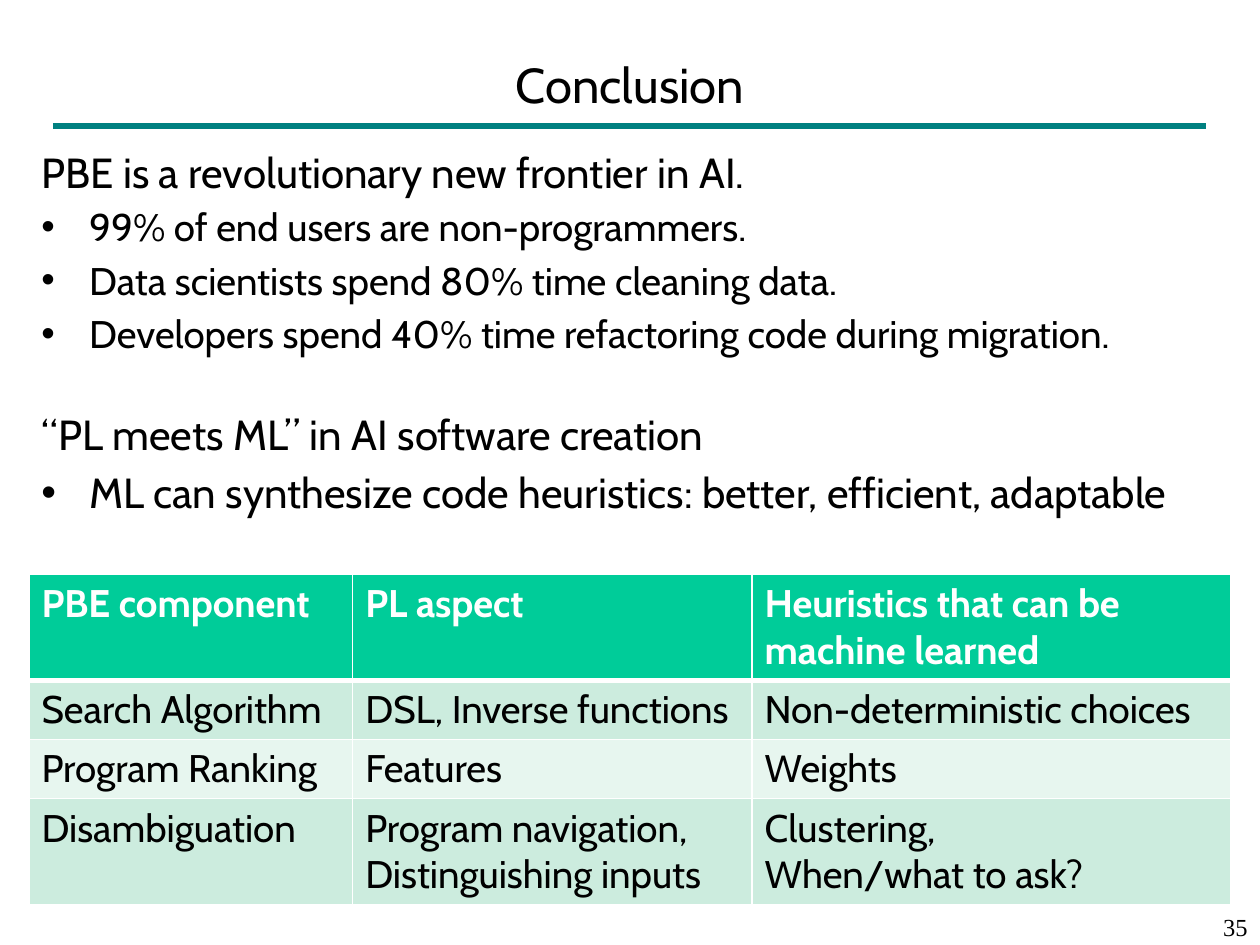
"""Build the conclusion slide: title, bullet points and a component table."""
from lxml import etree
from pptx import Presentation
from pptx.dml.color import RGBColor
from pptx.enum.shapes import MSO_CONNECTOR
from pptx.enum.text import MSO_ANCHOR, PP_ALIGN
from pptx.oxml.ns import qn
from pptx.util import Inches, Pt

STRAIGHT = MSO_CONNECTOR.STRAIGHT
LEFT, CENTER, RIGHT = PP_ALIGN.LEFT, PP_ALIGN.CENTER, PP_ALIGN.RIGHT
TOP, MIDDLE = MSO_ANCHOR.TOP, MSO_ANCHOR.MIDDLE

THEME = {
    "font": "Cabin", "number_font": "Times New Roman",
    "text": "000000", "light": "FFFFFF", "rule": "008080",
    "header": "00CC99", "bands": ("CCECDE", "E7F6EF"),
    "title": 28, "lead": 24, "point": 22, "number": 14,
    "rule_width": 4, "border": 1, "header_border": 3,
}

TITLE = "Conclusion"
NUMBER = "35"
BODY = [
    ("PBE is a revolutionary new frontier in AI.", "lead", False, 0),
    ("99% of end users are non-programmers.", "point", True, 4),
    ("Data scientists spend 80% time cleaning data.", "point", True, 4),
    ("Developers spend 40% time refactoring code during migration.", "point", True, 4),
    ("“PL meets ML” in AI software creation", "lead", False, 30),
    ("ML can synthesize code heuristics: better, efficient, adaptable", "lead", True, 4.5),
]
TABLE = [
    ("PBE component", "PL aspect", "Heuristics that can be machine learned"),
    ("Search Algorithm", "DSL, Inverse functions", "Non-deterministic choices"),
    ("Program Ranking", "Features", "Weights"),
    ("Disambiguation", "Program navigation, Distinguishing inputs",
     "Clustering,\nWhen/what to ask?"),
]
COLS = (2.57, 3.17, 3.8)
ROWS = (0.84, 0.47, 0.47, 0.84)
BOXES = {
    "title": (0.75, 0.33, 8.5, 0.67),
    "body": (0.23, 1.11, 9.55, 3.74),
    "number": (7.94, 7.19, 2.06, 0.31),
    "table": (0.23, 4.56, sum(COLS), sum(ROWS)),
}
RULE = (0.42, 1, 9.57, 1)
INDENT = 0.38


def rgb(name):
    return RGBColor.from_string(THEME.get(name, name))


def add_run(p, text, size, color="text", **extra):
    r = p.add_run()
    r.text = text
    fmt = {"name": THEME["font"], "size": Pt(THEME[size]), "bold": False, **extra}
    for key, value in fmt.items():
        setattr(r.font, key, value)
    r.font.color.rgb = rgb(color)


def add_box(slide, box, anchor=TOP):
    tf = slide.shapes.add_textbox(*map(Inches, BOXES[box])).text_frame
    tf.word_wrap = True
    tf.vertical_anchor = anchor
    return tf


def add_label(slide, box, text, align, anchor=TOP, **extra):
    p = add_box(slide, box, anchor).paragraphs[0]
    p.alignment = align
    add_run(p, text, box, **extra)


def add_bullet(p):
    pPr = p._p.get_or_add_pPr()
    pPr.set("marL", str(Inches(INDENT)))
    pPr.set("indent", str(-Inches(INDENT)))
    etree.SubElement(pPr, qn("a:buFont"), typeface="Arial")
    etree.SubElement(pPr, qn("a:buChar"), char="•")


def add_body(slide):
    tf = add_box(slide, "body")
    for i, (text, size, bullet, gap) in enumerate(BODY):
        p = tf.add_paragraph() if i else tf.paragraphs[0]
        p.alignment = LEFT
        p.space_before = Pt(gap)
        if bullet:
            add_bullet(p)
        add_run(p, text, size)


def add_rule(slide):
    line = slide.shapes.add_connector(STRAIGHT, *map(Inches, RULE))
    line.line.color.rgb = rgb("rule")
    line.line.width = Pt(THEME["rule_width"])
    etree.SubElement(line._element.spPr, qn("a:effectLst"))


def set_borders(cell, row):
    thick = {0: "B", 1: "T"}.get(row)
    tcPr = cell._tc.get_or_add_tcPr()
    for side in "LRTB":
        width = THEME["header_border" if side == thick else "border"]
        ln = etree.SubElement(tcPr, qn(f"a:ln{side}"), w=str(Pt(width)))
        fill = etree.SubElement(ln, qn("a:solidFill"))
        etree.SubElement(fill, qn("a:srgbClr"), val=THEME["light"])


def fill_cell(cell, text, row):
    set_borders(cell, row)
    cell.fill.solid()
    cell.fill.fore_color.rgb = rgb(THEME["bands"][(row - 1) % 2] if row else "header")
    tf = cell.text_frame
    for i, part in enumerate(text.split("\n")):
        p = tf.add_paragraph() if i else tf.paragraphs[0]
        add_run(p, part, "point", color="text" if row else "light", bold=row == 0)


def add_grid(slide):
    box = map(Inches, BOXES["table"])
    table = slide.shapes.add_table(len(ROWS), len(COLS), *box).table
    for col, width in zip(table.columns, COLS):
        col.width = Inches(width)
    for i, (height, texts) in enumerate(zip(ROWS, TABLE)):
        table.rows[i].height = Inches(height)
        for j, text in enumerate(texts):
            fill_cell(table.cell(i, j), text, i)


def main():
    prs = Presentation()
    prs.slide_width, prs.slide_height = Inches(10), Inches(7.5)
    slide = prs.slides.add_slide(prs.slide_layouts[6])
    add_rule(slide)
    add_body(slide)
    add_label(slide, "number", NUMBER, RIGHT, name=THEME["number_font"])
    add_label(slide, "title", TITLE, CENTER, MIDDLE)
    add_grid(slide)
    prs.save("out.pptx")


if __name__ == "__main__":
    main()
